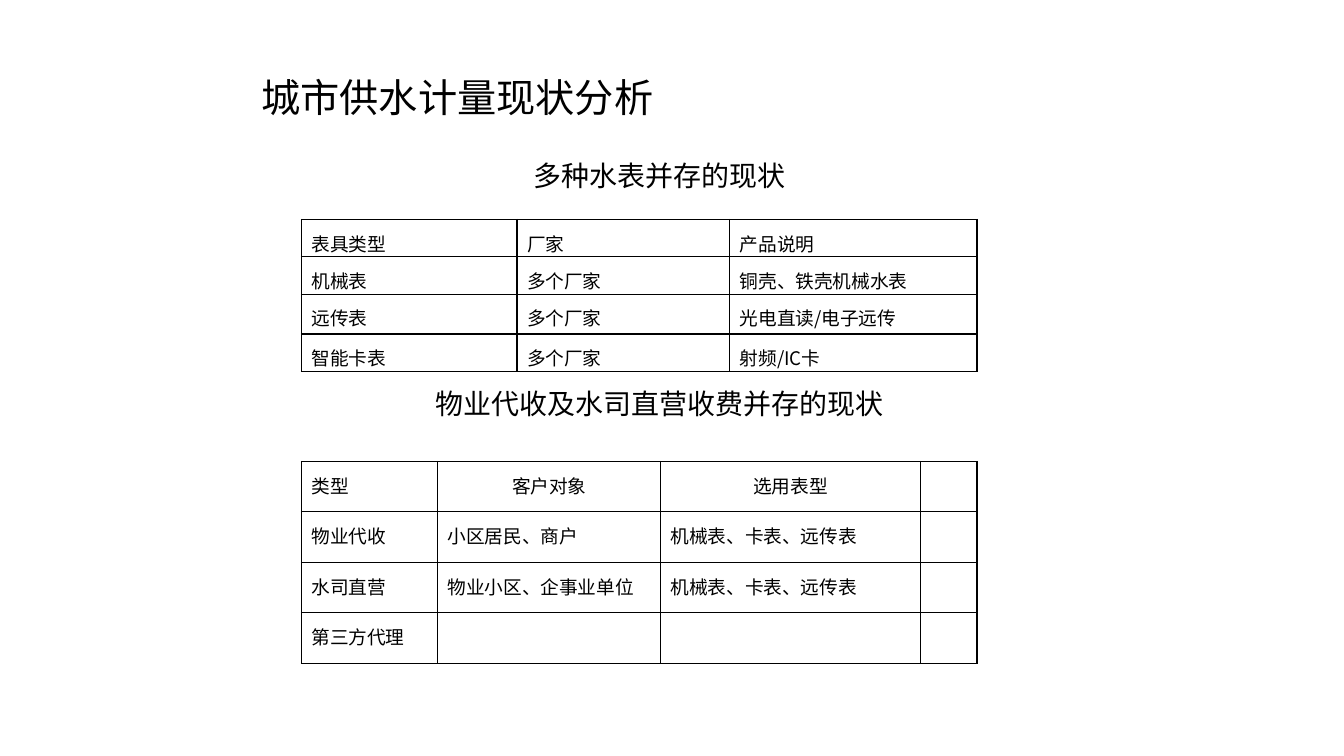
from lxml.etree import SubElement
from pptx import Presentation
from pptx.dml.color import RGBColor
from pptx.enum.text import PP_ALIGN as Align
from pptx.oxml.ns import qn
from pptx.util import Pt

COLORS = {"ink": "000000"}
TITLE_FONT = "Arial"
CELL_FONT = "Noto Sans CJK SC"
BORDER_SIDES = ("a:lnL", "a:lnR", "a:lnT", "a:lnB")

METER_ROWS = [
    ["表具类型", "厂家", "产品说明"],
    ["机械表", "多个厂家", "铜壳、铁壳机械水表"],
    ["远传表", "多个厂家", "光电直读/电子远传"],
    ["智能卡表", "多个厂家", "射频/IC卡"],
]
BILLING_ROWS = [
    ["类型", "客户对象", "选用表型", ""],
    ["物业代收", "小区居民、商户", "机械表、卡表、远传表", ""],
    ["水司直营", "物业小区、企事业单位", "机械表、卡表、远传表", ""],
    ["第三方代理", "", "", ""],
]


def write_text(para, text, size, font, align=Align.LEFT, before=0, spacing=None,
               east_asian=None):
    """Fill one paragraph with a single formatted run."""
    para.alignment = align
    if before:
        para.space_before = Pt(before)
    if spacing:
        para.line_spacing = spacing
    span = para.add_run()
    span.text = text
    span.font.size = Pt(size)
    span.font.bold = False
    span.font.name = font
    span.font.color.rgb = RGBColor.from_string(COLORS["ink"])
    if east_asian:
        SubElement(span.font._element, qn("a:ea"), typeface=east_asian)


def set_margins(holder):
    """Use the same insets for the text box and the cells."""
    holder.margin_left = holder.margin_right = Pt(5.4)
    holder.margin_top = holder.margin_bottom = Pt(2.7)


def add_borders(cell):
    """Draw a thin line on all four sides of a cell."""
    props = cell._tc.get_or_add_tcPr()
    for place, side in enumerate(BORDER_SIDES):
        line = props.makeelement(qn(side), {"w": str(Pt(0.75))})
        fill = SubElement(line, qn("a:solidFill"))
        SubElement(fill, qn("a:srgbClr"), val=COLORS["ink"])
        props.insert(place, line)


def add_headings(page):
    """Add the title and both table headings in one box."""
    box = page.shapes.add_textbox(Pt(134.6), Pt(36.7), Pt(437.8), Pt(257.8))
    frame = box.text_frame
    frame.word_wrap = True
    set_margins(frame)
    write_text(frame.paragraphs[0], "城市供水计量现状分析", 21, TITLE_FONT)
    for text, before in [("多种水表并存的现状", 20.5),
                         ("物业代收及水司直营收费并存的现状", 104)]:
        write_text(frame.add_paragraph(), text, 15, TITLE_FONT,
                   align=Align.CENTER, before=before)


def add_grid(page, rows, top, widths, heights, centered=()):
    """Add a ruled table; centered lists the centred header columns."""
    shape = page.shapes.add_table(len(rows), len(widths), Pt(161.5), Pt(top),
                                  Pt(sum(widths)), Pt(sum(heights)))
    table = shape.table
    table.first_row = table.horz_banding = False
    for column, width in zip(table.columns, widths):
        column.width = Pt(width)
    for row, height in zip(table.rows, heights):
        row.height = Pt(height)
    for r, texts in enumerate(rows):
        for c, text in enumerate(texts):
            cell = table.cell(r, c)
            set_margins(cell)
            cell.fill.background()
            add_borders(cell)
            align = Align.CENTER if r == 0 and c in centered else Align.LEFT
            write_text(cell.text_frame.paragraphs[0], text, 10, CELL_FONT,
                       align=align, spacing=1.2, east_asian=CELL_FONT)


def main():
    deck = Presentation()
    deck.slide_width, deck.slide_height = Pt(720), Pt(405)
    page = deck.slides.add_slide(deck.slide_layouts[6])

    # Title and headings
    add_headings(page)

    # Meter types
    add_grid(page, METER_ROWS, 117.6, [115.5, 114, 132.5], [20, 20, 21.4, 20])

    # Billing models
    add_grid(page, BILLING_ROWS, 247.2, [73, 119.5, 139, 30.5],
             [21, 26, 26, 21], centered=(1, 2))

    deck.save("out.pptx")


if __name__ == "__main__":
    main()
